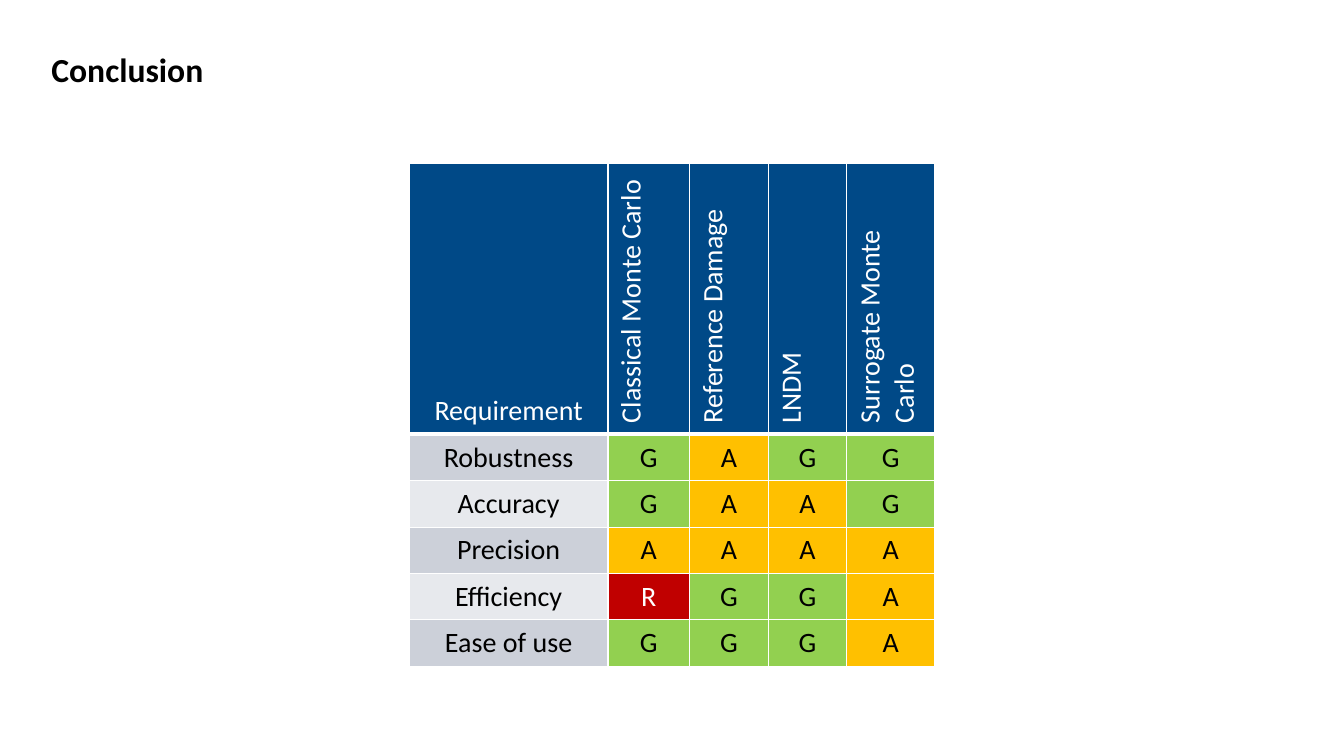
from pptx import Presentation
from pptx.dml.color import RGBColor
from pptx.enum.text import MSO_ANCHOR, PP_ALIGN
from pptx.oxml import parse_xml
from pptx.oxml.ns import nsdecls
from pptx.util import Inches, Pt

BLACK = RGBColor(0x00, 0x00, 0x00)
WHITE = RGBColor(0xFF, 0xFF, 0xFF)
NAVY = RGBColor(0x00, 0x49, 0x87)
DARK = RGBColor(0xCC, 0xD0, 0xD9)
LIGHT = RGBColor(0xE7, 0xE9, 0xED)
RATING = {
    "G": RGBColor(0x92, 0xD0, 0x50),
    "A": RGBColor(0xFF, 0xC0, 0x00),
    "R": RGBColor(0xC0, 0x00, 0x00),
}

HEADS = ["Requirement", "Classical Monte Carlo", "Reference Damage",
         "LNDM", "Surrogate Monte Carlo"]
SCORES = {
    "Robustness": "GAGG",
    "Accuracy": "GAAG",
    "Precision": "AAAA",
    "Efficiency": "RGGA",
    "Ease of use": "GGGA",
}
WIDTHS = [1.97, 0.81, 0.78, 0.78, 0.87]
HEIGHTS = [2.02, 0.4, 0.4, 0.4, 0.41, 0.39]


def style(font, size, color, bold=False):
    values = {"name": "Calibri", "size": Pt(size), "bold": bold}
    for key, value in values.items():
        setattr(font, key, value)
    font.color.rgb = color


def border(cell, side, width):
    line = parse_xml(
        f'<a:{side} {nsdecls("a")} w="{Pt(width)}"><a:solidFill>'
        f'<a:srgbClr val="{WHITE}"/></a:solidFill></a:{side}>')
    props = cell._tc.get_or_add_tcPr()
    props.insert(["lnL", "lnR", "lnT", "lnB"].index(side), line)


deck = Presentation()
deck.slide_width, deck.slide_height = Inches(13.33), Inches(7.5)
slide = deck.slides.add_slide(deck.slide_layouts[5])

# Title
title = slide.shapes.title
place = {"left": 0.41, "top": 0.49, "width": 8.95, "height": 0.44}
for key, value in place.items():
    setattr(title, key, Inches(value))
frame = title.text_frame
frame.text = "Conclusion"
frame.word_wrap = True
frame.vertical_anchor = MSO_ANCHOR.MIDDLE
para = frame.paragraphs[0]
para.alignment = PP_ALIGN.LEFT
para.line_spacing = 0.9
style(para.font, 24, BLACK, True)

# Table grid
rows = [HEADS] + [[name, *marks] for name, marks in SCORES.items()]
table = slide.shapes.add_table(
    len(rows), len(HEADS), Inches(4.06), Inches(1.62),
    Inches(sum(WIDTHS)), Inches(sum(HEIGHTS))).table
for col, width in zip(table.columns, WIDTHS):
    col.width = Inches(width)
for row, height in zip(table.rows, HEIGHTS):
    row.height = Inches(height)

# Cells
margins = {"margin_left": 0.11, "margin_right": 0.11,
           "margin_top": 0.06, "margin_bottom": 0.06}
for r, texts in enumerate(rows):
    for c, text in enumerate(texts):
        cell = table.cell(r, c)
        cell.text = text
        for key, value in margins.items():
            setattr(cell, key, Inches(value))
        upright = r == 0 and c > 0
        if r == 0:
            fill = NAVY
            cell.vertical_anchor = MSO_ANCHOR.MIDDLE if c else MSO_ANCHOR.BOTTOM
        elif c == 0:
            fill = DARK if r % 2 else LIGHT
        else:
            fill = RATING[text]
        if upright:
            cell._tc.get_or_add_tcPr().set("vert", "vert270")
        cell.fill.solid()
        cell.fill.fore_color.rgb = fill
        para = cell.text_frame.paragraphs[0]
        para.alignment = PP_ALIGN.LEFT if upright else PP_ALIGN.CENTER
        style(para.font, 20, WHITE if r == 0 or text == "R" else BLACK)
        for side in ["lnL", "lnR", "lnT", "lnB"]:
            border(cell, side, 3 if r == 0 and side == "lnB" else 1)

deck.save("out.pptx")
